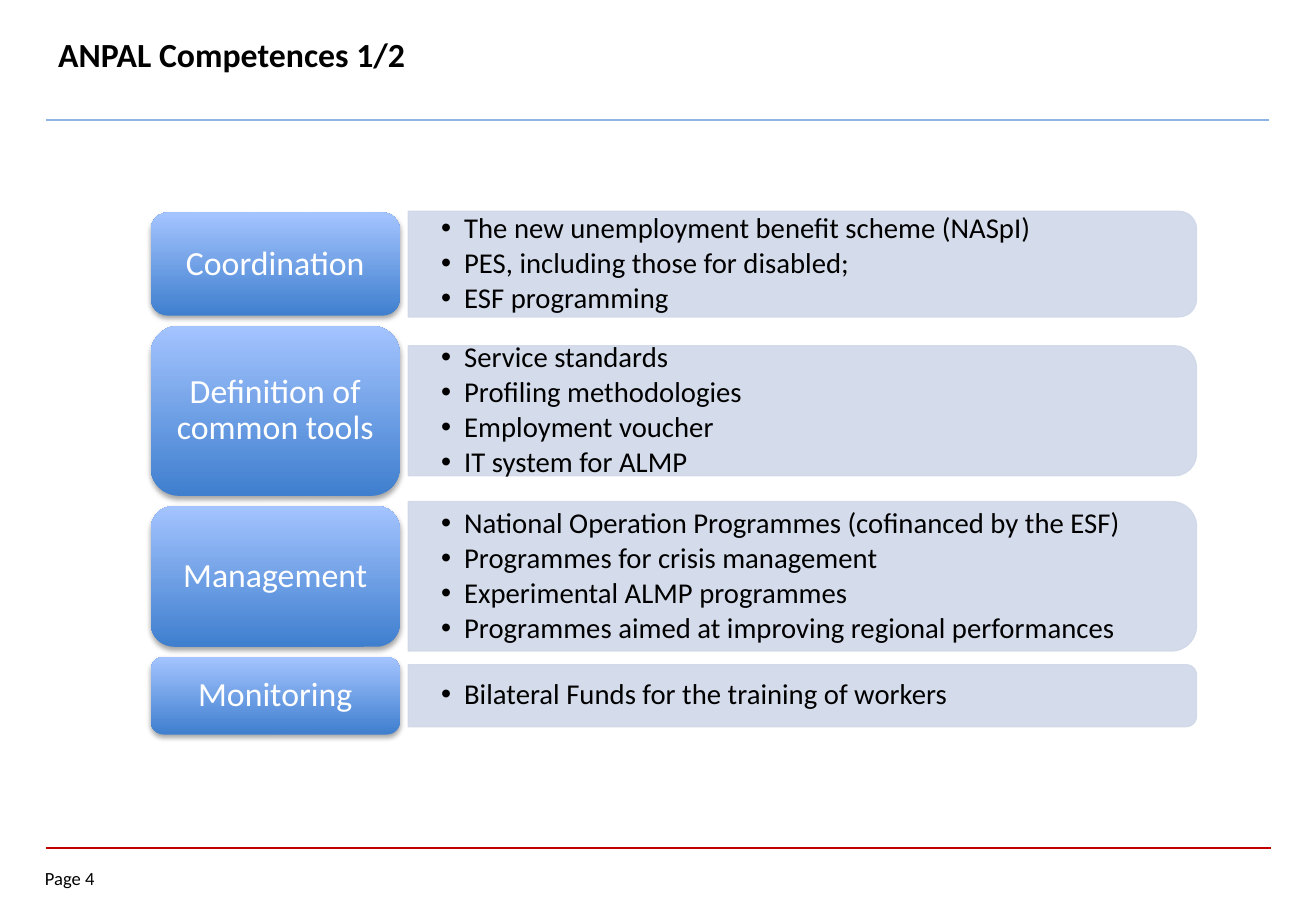
from lxml.etree import SubElement
from pptx import Presentation
from pptx.dml.color import RGBColor
from pptx.enum.shapes import MSO_CONNECTOR, MSO_SHAPE
from pptx.enum.text import MSO_ANCHOR, MSO_AUTO_SIZE, PP_ALIGN
from pptx.oxml.ns import qn
from pptx.util import Inches, Pt

LEFT, CENTER = PP_ALIGN.LEFT, PP_ALIGN.CENTER


def rgb(code):
    return RGBColor.from_string(code)


def set_alpha(color_format_parent, percent):
    """Make every solid colour below an element partly see-through."""
    for clr in color_format_parent.iter(qn("a:srgbClr")):
        SubElement(clr, qn("a:alpha"), val=str(percent * 1000))


def write(tf, *lines, size=17, color="000000", bold=False, align=LEFT,
          spacing=1.0, after=0, bullet=None, anchor=MSO_ANCHOR.MIDDLE,
          insets=(0.1, 0.05)):
    """Fill a text frame, one paragraph per line; insets are in inches."""
    tf.word_wrap, tf.auto_size = True, MSO_AUTO_SIZE.NONE
    tf.vertical_anchor = anchor
    tf.margin_left = tf.margin_right = Inches(insets[0])
    tf.margin_top = tf.margin_bottom = Inches(insets[1])
    for i, line in enumerate(lines):
        p = tf.add_paragraph() if i else tf.paragraphs[0]
        if bullet:
            pPr = p._p.get_or_add_pPr()
            pPr.set("marL", str(Inches(0.19)))
            pPr.set("indent", str(-Inches(0.19)))
            SubElement(pPr, qn("a:buFont"), typeface="Arial")
            SubElement(pPr, qn("a:buChar"), char=bullet)
        p.alignment, p.line_spacing = align, spacing
        p.space_before, p.space_after = Pt(0), Pt(after)
        r = p.add_run()
        r.text = line
        r.font.name, r.font.size, r.font.bold = "Calibri", Pt(size), bold
        r.font.color.rgb = rgb(color)


class Deck:
    """Style and current slide; lengths are percent of the slide's size."""
    PANEL, LABEL_LOW, LABEL_HIGH = "D0D8E8", "3F7FCE", "A4C4FF"

    def __init__(self, prs, layout):
        self.prs = prs
        self.slide = prs.slides.add_slide(prs.slide_layouts[layout])
        self.shapes = self.slide.shapes

    def x(self, share):
        return round(self.prs.slide_width * share / 100)

    def y(self, share):
        return round(self.prs.slide_height * share / 100)

    def box(self, x, y, w, h):
        return self.x(x), self.y(y), self.x(w), self.y(h)

    def place(self, sp, x, y, w, h):
        sp.left, sp.top, sp.width, sp.height = self.box(x, y, w, h)

    def title(self, text, *area):
        sp = self.shapes.title
        self.place(sp, *area)
        write(sp.text_frame, text, size=20, bold=True)

    def rule(self, x1, x2, y, color, width):
        cn = self.shapes.add_connector(MSO_CONNECTOR.STRAIGHT, self.x(x1),
                                       self.y(y), self.x(x2), self.y(y))
        cn.line.color.rgb, cn.line.width = rgb(color), Pt(width)
        SubElement(cn._element.spPr, qn("a:effectLst"))

    def note(self, text, *area):
        sp = self.shapes.add_textbox(*self.box(*area))
        write(sp.text_frame, text, size=11, anchor=MSO_ANCHOR.TOP,
              insets=(0, 0))

    def panel(self, *area):
        """Bar rounded at its right end: a top-rounded shape turned by 90."""
        x, y, w, h = self.box(*area)
        sp = self.shapes.add_shape(MSO_SHAPE.ROUND_2_SAME_RECTANGLE,
                                   x + (w - h) // 2, y + (h - w) // 2, h, w)
        sp.rotation = 90
        sp.shadow.inherit = False
        sp.fill.solid()
        sp.fill.fore_color.rgb = sp.line.color.rgb = rgb(self.PANEL)
        sp.line.width = Pt(0.75)
        set_alpha(sp._element.spPr, 90)

    def bullets(self, idx, items, *area):
        sp = self.slide.placeholders[idx]
        self.place(sp, *area)
        write(sp.text_frame, *items, spacing=0.9, after=2.4, bullet="•",
              insets=(0.27, 0))
        self.shapes._spTree.append(sp._element)  # bring above its panel

    def label(self, text, *area):
        sp = self.shapes.add_shape(MSO_SHAPE.ROUNDED_RECTANGLE,
                                   *self.box(*area))
        sp.line.fill.background()
        sp.fill.gradient()
        sp.fill.gradient_angle = 90
        for stop, color in zip(sp.fill.gradient_stops,
                               (self.LABEL_LOW, self.LABEL_HIGH)):
            stop.color.rgb = rgb(color)
        # Soft shadow straight below
        sp.shadow.inherit = False
        effects = sp._element.spPr.find(qn("a:effectLst"))
        shadow = SubElement(effects, qn("a:outerShdw"), blurRad=str(Pt(3.1)),
                            dist=str(Pt(1.8)), dir="5400000",
                            rotWithShape="0")
        SubElement(shadow, qn("a:srgbClr"), val="000000")
        set_alpha(shadow, 35)
        write(sp.text_frame, text, size=20, color="FFFFFF", align=CENTER,
              spacing=0.9, insets=(0.08, 0.04))


# Label, label height, panel height, list
COMPETENCES = [
    ("Coordination", 11.33, 11.6,
     ["The new unemployment benefit scheme (NASpI)",
      "PES, including those for disabled;",
      "ESF programming"]),
    ("Definition of common tools", 18.67, 14.27,
     ["Service standards", "Profiling methodologies",
      "Employment voucher", "IT system for ALMP"]),
    ("Management", 15.47, 16.4,
     ["National Operation Programmes (cofinanced by the ESF)",
      "Programmes for crisis management",
      "Experimental ALMP programmes",
      "Programmes aimed at improving regional performances"]),
    ("Monitoring", 8.53, 6.8,
     ["Bilateral Funds for the training of workers"]),
]
LABEL_X, LABEL_W = 11.45, 18.93
PANEL_X, PANEL_W = 31.02, 59.9
FIRST_Y, GAP = 23.33, 1.1


def main():
    prs = Presentation()
    prs.slide_width, prs.slide_height = Inches(10.83), Inches(7.5)
    deck = Deck(prs, layout=4)  # title and four body placeholders

    # Frame of the page
    deck.rule(3.5, 96.6, 93.07, "C00000", 1)
    deck.rule(3.5, 96.4, 13.2, "8EB4E3", 1.5)
    deck.note("Page 4", 3.42, 95.2, 6.74, 2.93)
    deck.title("ANPAL Competences 1/2", 3.5, 1.2, 91.6, 9.47)

    # Stacked rows, each panel centred on its label
    y = FIRST_Y
    for idx, (name, label_h, panel_h, items) in enumerate(COMPETENCES, 1):
        area = PANEL_X, y + (label_h - panel_h) / 2, PANEL_W, panel_h
        deck.panel(*area)
        deck.bullets(idx, items, *area)
        deck.label(name, LABEL_X, y, LABEL_W, label_h)
        y += label_h + GAP

    prs.save("out.pptx")


if __name__ == "__main__":
    main()
